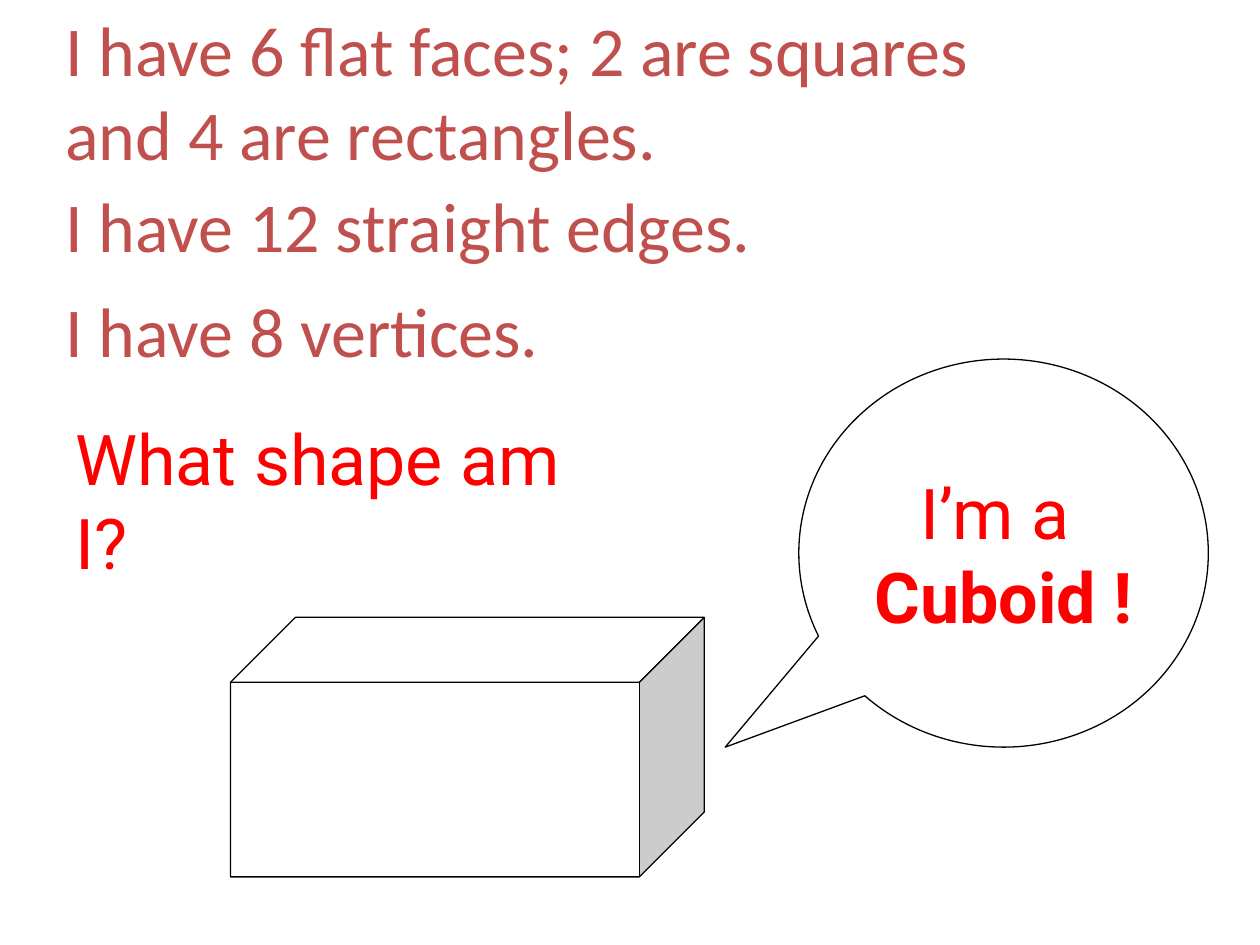
from dataclasses import dataclass

from pptx import Presentation
from pptx import util as u
from pptx.dml.color import RGBColor
from pptx.enum import shapes, text

CLUE_COLOUR = "C0504D"
ANSWER_COLOUR = "FF0000"


@dataclass
class Label:
    words: str
    left: float
    top: float
    width: float
    height: float
    font: str
    colour: str


@dataclass
class Solid:
    kind: shapes.MSO_SHAPE
    left: float
    top: float
    width: float
    height: float
    adjustments: tuple[float, ...]


LABELS = [
    Label("I have 6 flat faces; 2 are squares and 4 are rectangles.",
          0.42, 0, 7.92, 1.45, "Calibri", CLUE_COLOUR),
    Label("I have 12 straight edges.", 0.42, 1.4, 7.92, 0.77, "Calibri", CLUE_COLOUR),
    Label("I have 8 vertices.", 0.42, 2.23, 7.92, 0.77, "Calibri", CLUE_COLOUR),
    Label("What shape am I?", 0.5, 3.25, 4.26, 0.77, "Roboto", ANSWER_COLOUR),
]
CALLOUT = Solid(shapes.MSO_SHAPE.OVAL_CALLOUT, 6.34, 2.85, 3.25, 3.08, (-0.68, 0.5))
CUBOID = Solid(shapes.MSO_SHAPE.CUBE, 1.83, 4.9, 3.76, 2.06, (0.25,))


def colour(value: str) -> RGBColor:
    return RGBColor.from_string(value)


def place(item: Label | Solid) -> list[u.Length]:
    return [u.Inches(size) for size in (item.left, item.top, item.width, item.height)]


def style_runs(para, font: str, value: str, bold: bool = False) -> None:
    for span in para.runs:
        span.font.name = font
        span.font.size = u.Pt(40)
        span.font.bold = bold
        span.font.color.rgb = colour(value)


def draw_label(page, label: Label) -> None:
    box = page.shapes.add_textbox(*place(label))
    frame = box.text_frame
    frame.word_wrap = True
    frame.text = label.words
    style_runs(frame.paragraphs[0], label.font, label.colour)


def draw_solid(page, solid: Solid):
    shape = page.shapes.add_shape(solid.kind, *place(solid))
    for index, value in enumerate(solid.adjustments):
        shape.adjustments[index] = value
    shape.shadow.inherit = False
    shape.fill.solid()
    shape.fill.fore_color.rgb = colour("FFFFFF")
    shape.line.color.rgb = colour("000000")
    shape.line.width = u.Pt(0.75)
    return shape


def write_answer(callout) -> None:
    frame = callout.text_frame
    frame.word_wrap = False
    frame.vertical_anchor = text.MSO_ANCHOR.MIDDLE
    frame.text = "I’m a \nCuboid !"
    for para, bold in zip(frame.paragraphs, (False, True)):
        para.alignment = text.PP_ALIGN.CENTER
        style_runs(para, "Roboto", ANSWER_COLOUR, bold)


def main() -> None:
    deck = Presentation()
    deck.slide_width, deck.slide_height = u.Inches(10), u.Inches(7.5)
    page = deck.slides.add_slide(deck.slide_layouts[6])
    for label in LABELS:
        draw_label(page, label)
    write_answer(draw_solid(page, CALLOUT))
    draw_solid(page, CUBOID)
    deck.save("out.pptx")


if __name__ == "__main__":
    main()
